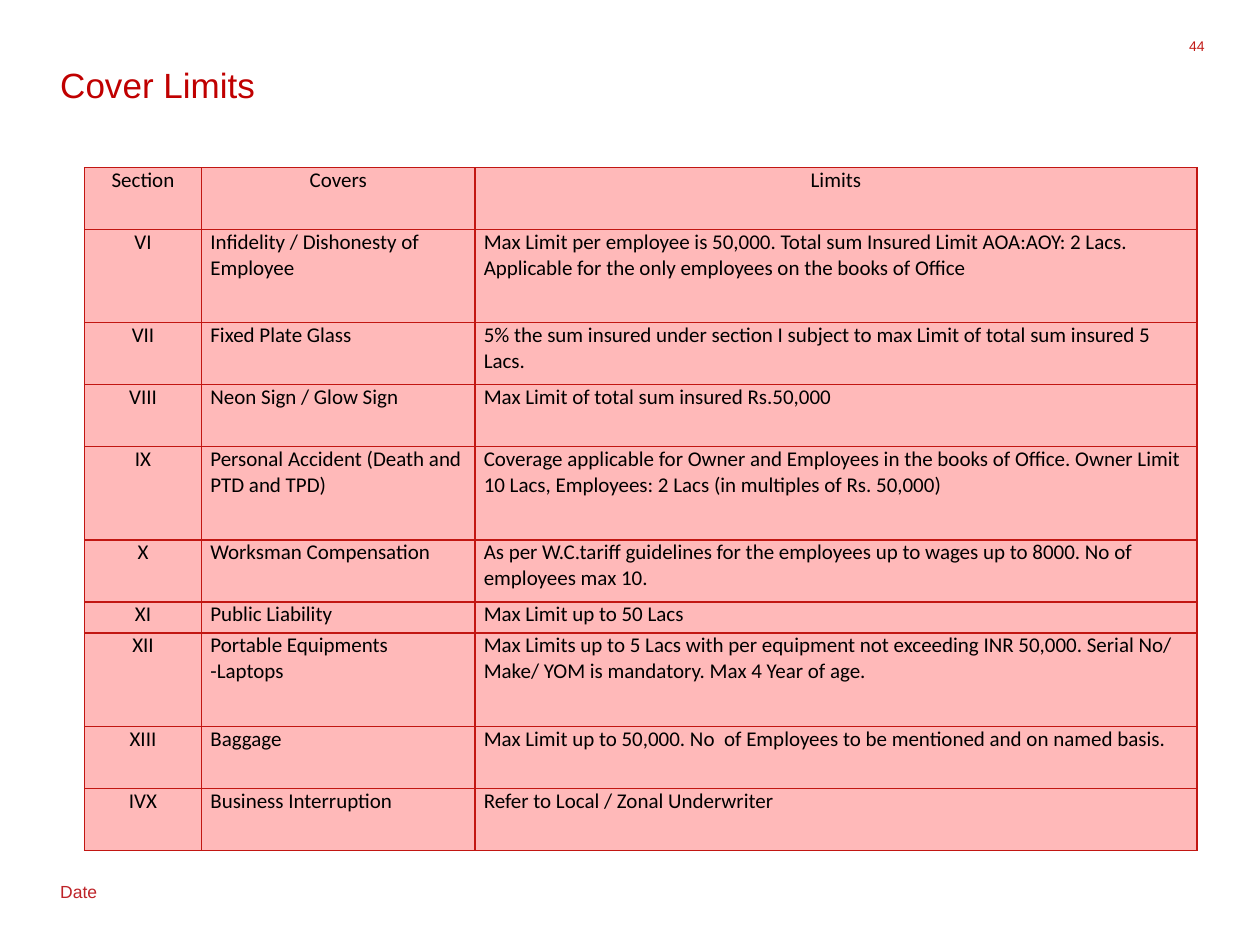
from lxml import etree
from pptx import Presentation
from pptx.dml.color import RGBColor
from pptx.enum.text import PP_ALIGN
from pptx.oxml.ns import qn
from pptx.util import Inches, Pt

CENTER, LEFT, RIGHT = PP_ALIGN.CENTER, PP_ALIGN.LEFT, PP_ALIGN.RIGHT
BORDER, CELL_FILL = "C21612", "FFB9B9"
COL_WIDTHS = (0.93, 2.17, 5.73)
ROWS = [
    (2, "Section", "Covers", "Limits"),
    (3, "VI", "Infidelity / Dishonesty of Employee",
     "Max Limit per employee is 50,000. Total sum Insured Limit AOA:AOY: 2 Lacs. "
     "Applicable for the only employees on the books of Office"),
    (2, "VII", "Fixed Plate Glass",
     "5% the sum insured under section I subject to max Limit of total sum insured 5 Lacs."),
    (2, "VIII", "Neon Sign / Glow Sign", "Max Limit of total sum insured Rs.50,000"),
    (3, "IX", "Personal Accident (Death and PTD and TPD)",
     "Coverage applicable for Owner and Employees in the books of Office. Owner Limit "
     "10 Lacs, Employees: 2 Lacs (in multiples of Rs. 50,000)"),
    (2, "X", "Worksman Compensation",
     "As per W.C.tariff guidelines for the employees up to wages up to 8000. "
     "No of employees max 10."),
    (1, "XI", "Public Liability", "Max Limit up to 50 Lacs"),
    (3, "XII", "Portable Equipments\v-Laptops",
     "Max Limits up to 5 Lacs with per equipment not exceeding INR 50,000. Serial No/ "
     "Make/ YOM is mandatory. Max 4 Year of age."),
    (2, "XIII", "Baggage",
     "Max Limit up to 50,000. No  of Employees to be mentioned and on named basis."),
    (2, "IVX", "Business Interruption", "Refer to Local / Zonal Underwriter"),
]


def rgb(color):
    return RGBColor.from_string(color)


def style(p, font, size, color, align=LEFT):
    p.font.name = font
    p.font.size = Pt(size)
    p.font.color.rgb = rgb(color)
    p.alignment = align


def add_label(s, box, text, size, color, align=LEFT, wrap=True):
    sp = s.shapes.add_textbox(*map(Inches, box))
    tf = sp.text_frame
    tf.word_wrap = wrap
    p = tf.paragraphs[0]
    p.text = text
    style(p, "Arial", size, color, align)
    return tf


def add_title(s, box):
    tf = add_label(s, box, "Cover Limits", 20, "C00000")
    tf.paragraphs[0].line_spacing = Pt(22)


def add_page_number(s, box):
    tf = add_label(s, box, "44", 8, "C21B17", RIGHT)
    tf.margin_left = tf.margin_top = tf.margin_right = tf.margin_bottom = 0


def add_date(s, box):
    p = add_label(s, box, "Date", 10, "BE2328", wrap=False).paragraphs[0]
    p.line_spacing = 1.15
    p.space_after = Pt(10)


def add_borders(cell):
    tcPr = cell._tc.get_or_add_tcPr()
    for i, side in enumerate(("a:lnL", "a:lnR", "a:lnT", "a:lnB")):
        ln = etree.Element(qn(side), w=str(Pt(0.75)))
        fill = etree.SubElement(ln, qn("a:solidFill"))
        etree.SubElement(fill, qn("a:srgbClr"), val=BORDER)
        tcPr.insert(i, ln)


def fill_cell(cell, text, align):
    cell.margin_left = cell.margin_right = Inches(0.07)
    cell.margin_top = cell.margin_bottom = 0
    cell.fill.solid()
    cell.fill.fore_color.rgb = rgb(CELL_FILL)
    add_borders(cell)
    p = cell.text_frame.paragraphs[0]
    p.text = text
    style(p, "Calibri", 12, "000000", align)


def add_limits_table(s, box):
    left, top, width, height = map(Inches, box)
    table = s.shapes.add_table(len(ROWS), len(COL_WIDTHS), left, top, width, height).table
    for col, w in zip(table.columns, COL_WIDTHS):
        col.width = Inches(w)
    total = sum(row[0] for row in ROWS)
    for r, (lines, *texts) in enumerate(ROWS):
        table.rows[r].height = int(height * lines / total)
        for c, text in enumerate(texts):
            fill_cell(table.cell(r, c), text, CENTER if r == 0 or c == 0 else LEFT)


def main():
    prs = Presentation()
    prs.slide_width, prs.slide_height = Inches(10), Inches(7.5)
    s = prs.slides.add_slide(prs.slide_layouts[6])
    add_date(s, (0.38, 6.92, 0.5, 0.28))
    add_page_number(s, (9.34, 0.3, 0.22, 0.2))
    add_title(s, (0.38, 0.48, 9.17, 0.57))
    add_limits_table(s, (0.67, 1.33, 8.83, 5.42))
    prs.save("out.pptx")


if __name__ == "__main__":
    main()
